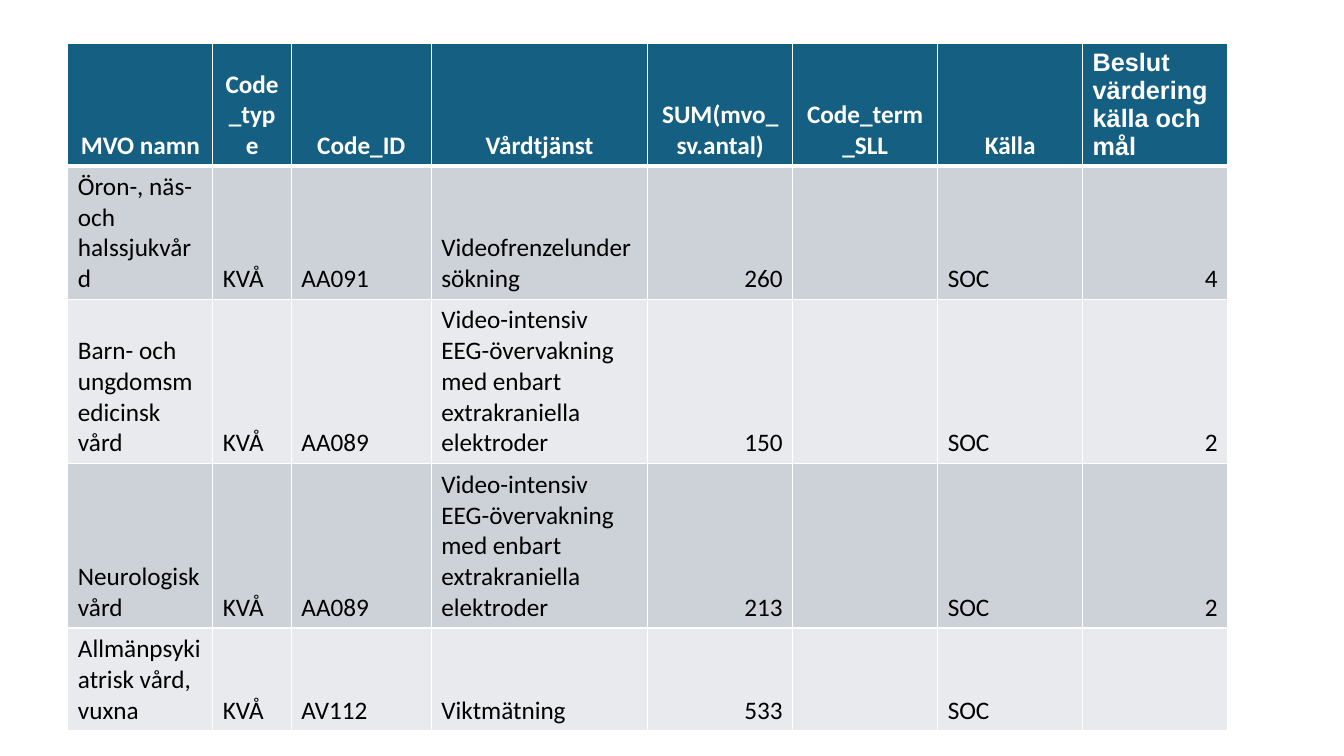
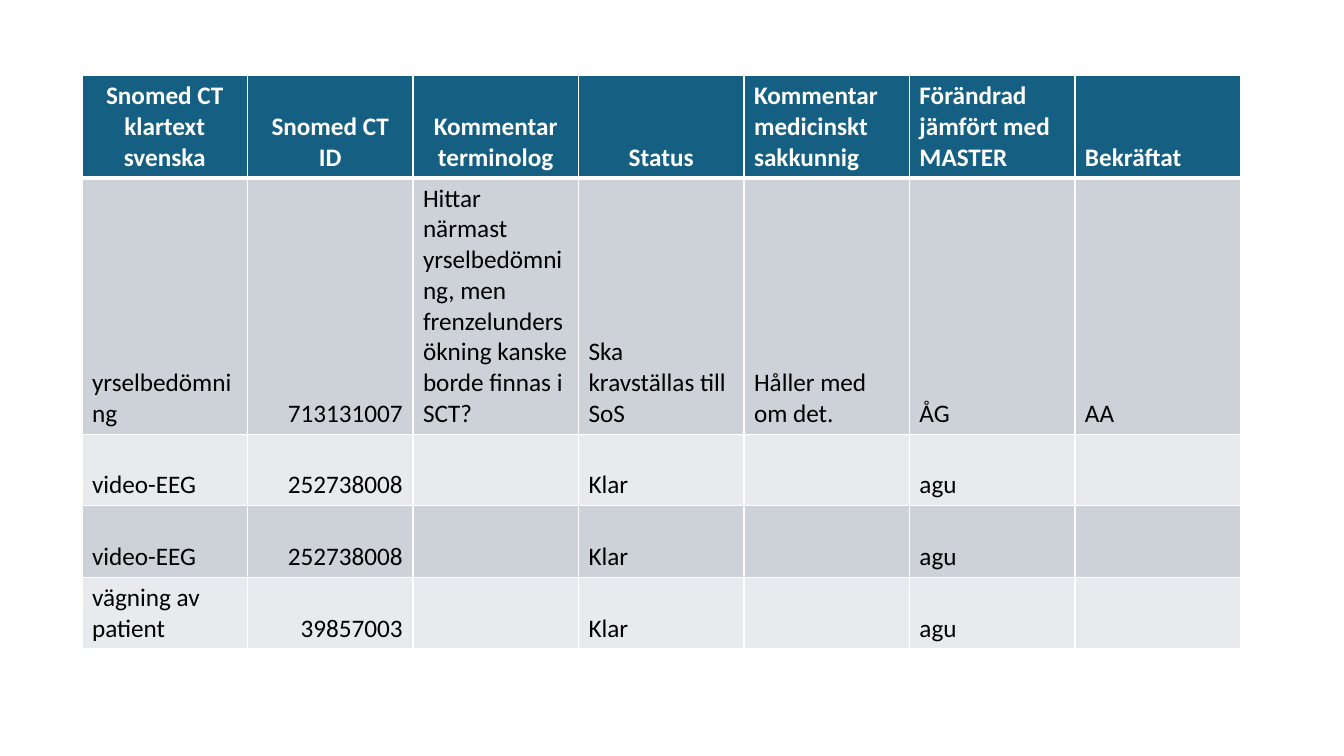
from dataclasses import dataclass

from lxml.etree import SubElement
from pptx import Presentation
from pptx.dml.color import RGBColor
from pptx.enum.text import MSO_ANCHOR, PP_ALIGN
from pptx.oxml.ns import qn
from pptx.util import Inches, Pt


@dataclass(frozen=True)
class Theme:
    """Holds the colours, fonts and sizes of the deck."""
    header: str = "156082"
    bands: tuple = ("CCD2D8", "E8EAED")
    light: str = "FFFFFF"
    dark: str = "000000"
    font: str = "Calibri"
    alt_font: str = "Arial"
    size: int = 18
    thin: int = 1
    thick: int = 3


THEME = Theme()
SLIDE_W, SLIDE_H = Inches(13.33), Inches(7.5)
EEG = "Video-intensiv EEG-övervakning med enbart extrakraniella elektroder"

CODES = {
    "box": (5.05, 5.73, 86.3, 90.8),
    "cols": (1.44, 0.78, 1.39, 2.15, 1.44, 1.44, 1.44, 1.44),
    "heights": (1.21, 1.32, 1.63, 1.63, 1.02),
    "centred": 7,
    "alt_heads": {7},
    "rows": (
        ("MVO namn", "Code_type", "Code_ID", "Vårdtjänst", "SUM(mvo_sv.antal)",
         "Code_term_SLL", "Källa", "Beslut värdering källa och mål"),
        ("Öron-, näs- och halssjukvård", "KVÅ", "AA091",
         "Videofrenzelundersökning", "260", "", "SOC", "4"),
        ("Barn- och ungdomsmedicinsk vård", "KVÅ", "AA089", EEG, "150", "", "SOC", "2"),
        ("Neurologisk vård", "KVÅ", "AA089", EEG, "213", "", "SOC", "2"),
        ("Allmänpsykiatrisk vård, vuxna", "KVÅ", "AV112", "Viktmätning",
         "533", "", "SOC", ""),
    ),
}

TERMS = {
    "box": (6.1, 10, 86.2, 75.6),
    "cols": (1,) * 7,
    "heights": (1.01, 2.53, 0.71, 0.71, 0.71),
    "centred": 4,
    "alt_heads": set(),
    "rows": (
        ("Snomed CT klartext svenska", "Snomed CT ID", "Kommentar terminolog", "Status",
         "Kommentar medicinskt sakkunnig", "Förändrad jämfört med MASTER", "Bekräftat"),
        ("yrselbedömning", "713131007",
         "Hittar närmast yrselbedömning, men frenzelundersökning kanske borde finnas i SCT?",
         "Ska kravställas till SoS", "Håller med om det.", "ÅG", "AA"),
        ("video-EEG", "252738008", "", "Klar", "", "agu", ""),
        ("video-EEG", "252738008", "", "Klar", "", "agu", ""),
        ("vägning av patient", "39857003", "", "Klar", "", "agu", ""),
    ),
}


def share_out(lines, weights, total, attr):
    """Divides a length over columns or rows by weight."""
    for line, weight in zip(lines, weights):
        setattr(line, attr, round(total * weight / sum(weights)))


def set_borders(cell, top, bottom):
    """Draws the light rules around a cell."""
    tc_pr = cell._tc.get_or_add_tcPr()
    sides = (("lnL", THEME.thin), ("lnR", THEME.thin), ("lnT", top), ("lnB", bottom))
    for side, width in sides:
        ln = SubElement(tc_pr, qn(f"a:{side}"), w=str(Pt(width)))
        fill = SubElement(ln, qn("a:solidFill"))
        SubElement(fill, qn("a:srgbClr"), val=THEME.light)


def fill_cell(cell, text, row, align, font):
    """Sets the rules, band colour and text of one cell."""
    head = row == 0
    set_borders(cell, THEME.thick if row == 1 else THEME.thin,
                THEME.thick if head else THEME.thin)
    cell.fill.solid()
    colour = THEME.header if head else THEME.bands[(row - 1) % 2]
    cell.fill.fore_color.rgb = RGBColor.from_string(colour)
    cell.vertical_anchor = MSO_ANCHOR.BOTTOM
    p = cell.text_frame.paragraphs[0]
    p.alignment = align
    p.font.size = Pt(THEME.size)
    if text:
        r = p.add_run()
        r.text = text
        r.font.name = font
        r.font.size = Pt(THEME.size)
        r.font.bold = head
        r.font.color.rgb = RGBColor.from_string(THEME.light if head else THEME.dark)


def add_grid(s, data):
    """Places a table in a box given in percent of the slide."""
    x, y, w, h = (round(side * share / 100) for side, share
                  in zip((SLIDE_W, SLIDE_H) * 2, data["box"]))
    rows = data["rows"]
    table = s.shapes.add_table(len(rows), len(rows[0]), x, y, w, h).table
    share_out(table.columns, data["cols"], w, "width")
    share_out(table.rows, data["heights"], h, "height")
    for i, row in enumerate(rows):
        for j, text in enumerate(row):
            align, font = PP_ALIGN.LEFT, THEME.font
            if i == 0 and j < data["centred"]:
                align = PP_ALIGN.CENTER
            elif text.isdigit():
                align = PP_ALIGN.RIGHT
            if i == 0 and j in data["alt_heads"]:
                font = THEME.alt_font
            fill_cell(table.cell(i, j), text, i, align, font)


def main():
    """Builds and saves the deck."""
    prs = Presentation()
    prs.slide_width, prs.slide_height = SLIDE_W, SLIDE_H
    for data in (CODES, TERMS):
        add_grid(prs.slides.add_slide(prs.slide_layouts[6]), data)
    prs.save("out.pptx")


if __name__ == "__main__":
    main()
